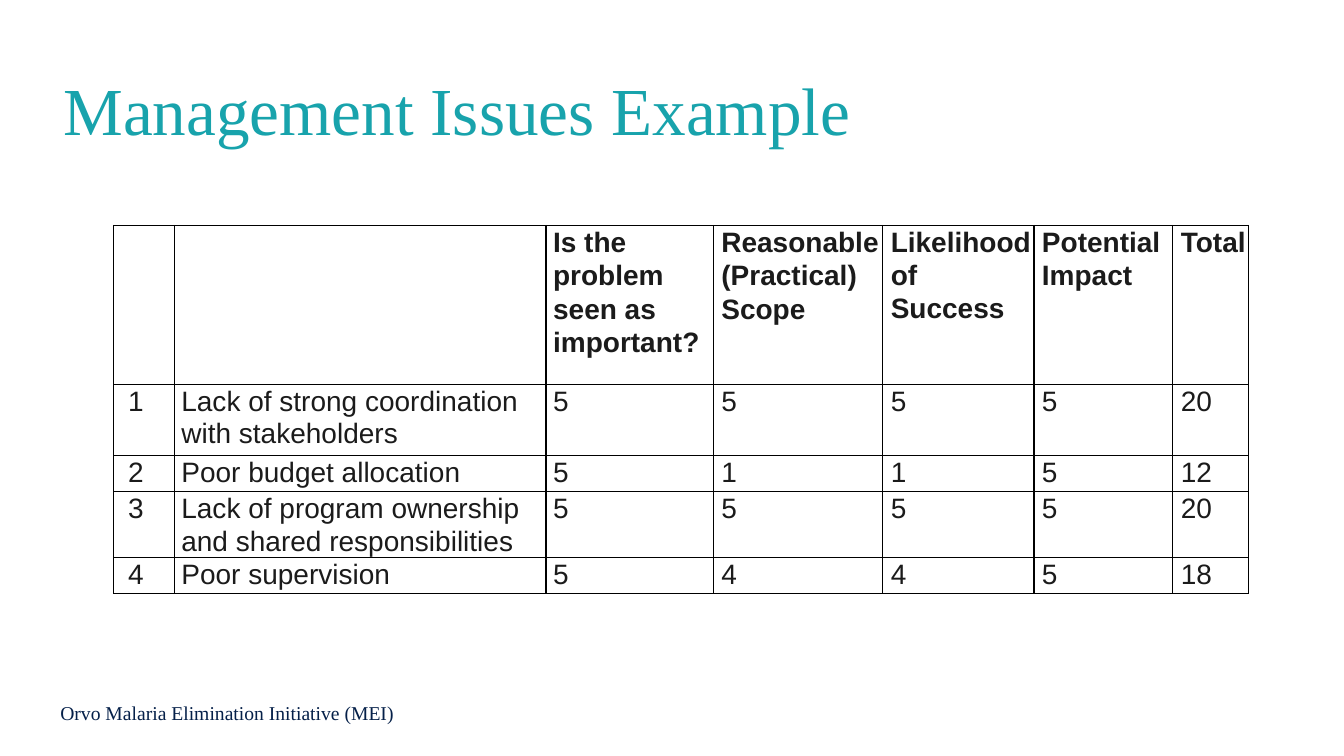
import pptx
import pptx.util
import pptx.dml.color
import pptx.enum.text
import pptx.oxml
import pptx.oxml.ns

Cm, Pt = pptx.util.Cm, pptx.util.Pt

# Content
TITLE = "Management Issues Example"
FOOT = "Orvo Malaria Elimination Initiative (MEI)"
# Header cells: paragraphs of (text, line spacing, points before)
EXACT = Pt(23.4)
HEADS = [
    [],
    [],
    [("Is the", EXACT, 0), ("problem", 1.0, 1.6), ("seen as important?", 1.07, 0.1)],
    [("Reasonable", EXACT, 0), ("(Practical) Scope", 1.07, 0.1)],
    [("Likelihood of", EXACT, 0), ("Success", 1.0, 1.8)],
    [("Potential Impact", EXACT, 0)],
    [("Total", EXACT, 0)],
]
# Issue and its four scores; number and total are worked out
ISSUES = [
    ("Lack of strong coordination with stakeholders", (5, 5, 5, 5)),
    ("Poor budget allocation", (5, 1, 1, 5)),
    ("Lack of program ownership and shared responsibilities", (5, 5, 5, 5)),
    ("Poor supervision", (5, 4, 4, 5)),
]
COLORS = {"title": "18A3AC", "foot": "052049", "text": "1B1B1B", "line": "000000"}
SERIF, SANS = "Times New Roman", "Arial"

# Sizes in centimetres
WIDTHS = [1.52, 9.37, 4.22, 4.27, 3.81, 3.5, 1.91]
HEIGHTS = [4, 1.8, 0.91, 1.65, 0.91]
INDENTS = [0.36, 0.18, 0.18, 0.2, 0.2, 0.2, 0.2]


def add_run(para, text, font, size, color, bold=False):
    run = para.add_run()
    run.text = text
    run.font.name = font
    run.font.size = Pt(size)
    run.font.bold = bold
    run.font.color.rgb = pptx.dml.color.RGBColor.from_string(COLORS[color])


def add_label(slide, box, text, size, color):
    frame = slide.shapes.add_textbox(*map(Cm, box)).text_frame
    frame.word_wrap = True
    add_run(frame.paragraphs[0], text, SERIF, size, color)
    return frame


def add_edges(cell):
    props = cell._tc.get_or_add_tcPr()
    for i, side in enumerate(("lnL", "lnR", "lnT", "lnB")):
        props.insert(i, pptx.oxml.parse_xml(
            f'<a:{side} {pptx.oxml.ns.nsdecls("a")} w="12700"><a:solidFill>'
            f'<a:srgbClr val="{COLORS["line"]}"/></a:solidFill></a:{side}>'))


def fill_cell(cell, lines, indent, bold):
    cell.fill.background()
    add_edges(cell)
    cell.margin_left = Cm(indent)
    cell.margin_right = cell.margin_top = cell.margin_bottom = 0
    frame = cell.text_frame
    for i, (text, pitch, gap) in enumerate(lines):
        para = frame.add_paragraph() if i else frame.paragraphs[0]
        para.line_spacing = pitch
        para.space_before = Pt(gap)
        add_run(para, text, SANS, 20, "text", bold)


def add_grid(slide):
    rows = [HEADS]
    for num, (issue, scores) in enumerate(ISSUES, 1):
        values = (num, issue, *scores, sum(scores))
        rows.append([[(str(value), EXACT, 0)] for value in values])
    grid = slide.shapes.add_table(
        len(rows), len(WIDTHS), Cm(2.87), Cm(5.68),
        Cm(sum(WIDTHS)), Cm(sum(HEIGHTS))).table
    for col, width in zip(grid.columns, WIDTHS):
        col.width = Cm(width)
    for r, row in enumerate(rows):
        grid.rows[r].height = Cm(HEIGHTS[r])
        for c, lines in enumerate(row):
            fill_cell(grid.cell(r, c), lines, INDENTS[c], r == 0)


def main():
    deck = pptx.Presentation()
    deck.slide_width, deck.slide_height = Cm(33.87), Cm(19.05)
    slide = deck.slides.add_slide(deck.slide_layouts[6])

    # Footer
    add_label(slide, (1.27, 17.53, 13.49, 0.86), FOOT, 14, "foot")

    # Title
    frame = add_label(slide, (1.35, 1.02, 31.62, 3.68), TITLE, 48, "title")
    frame.vertical_anchor = pptx.enum.text.MSO_ANCHOR.MIDDLE
    frame.paragraphs[0].line_spacing = 0.9

    # Scoring table
    add_grid(slide)
    deck.save("out.pptx")


if __name__ == "__main__":
    main()
